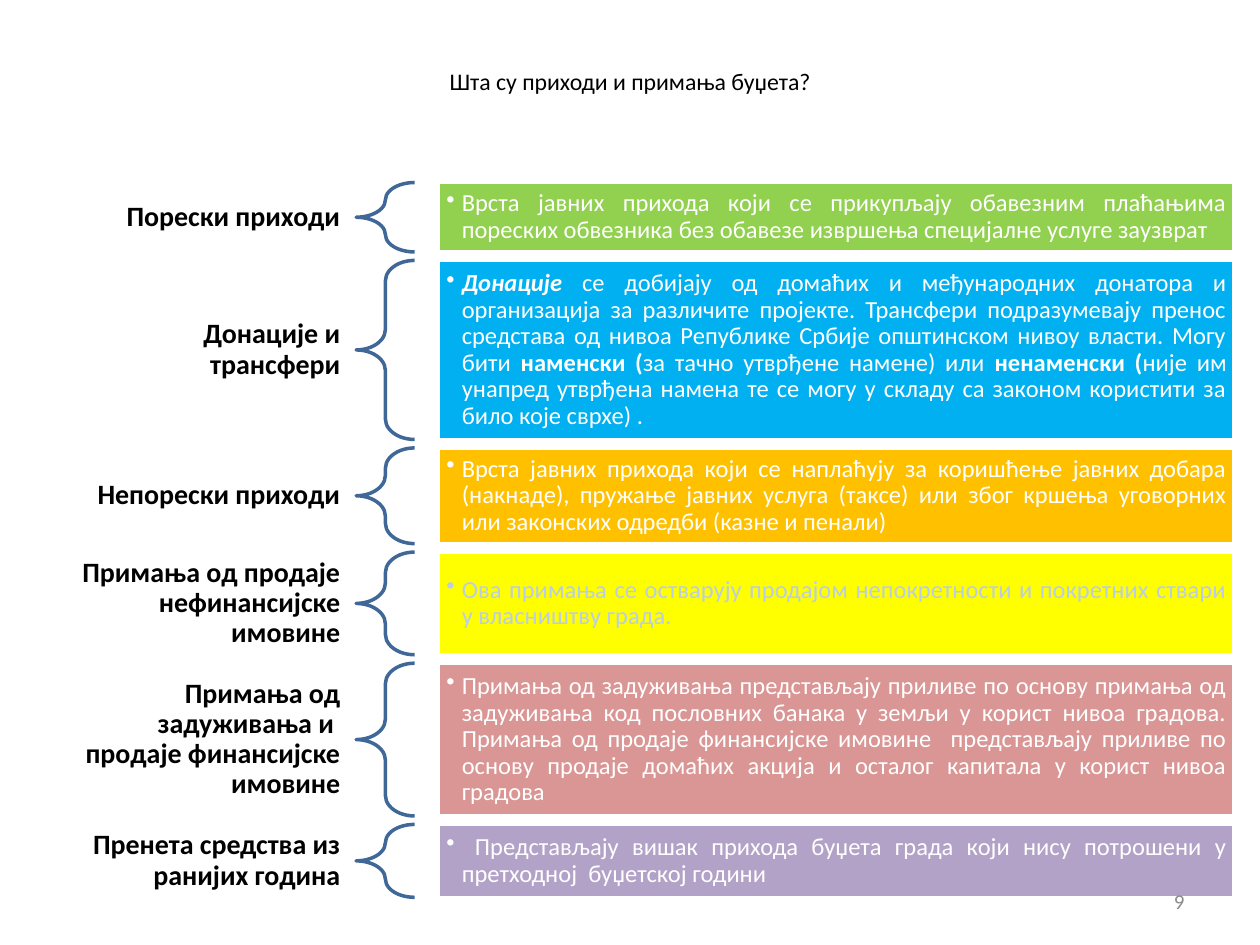
from lxml import etree
from pptx import Presentation
from pptx.dml.color import RGBColor
from pptx.enum import shapes, text
from pptx.oxml.ns import qn
from pptx.util import Cm, Pt

FONT = "Calibri"
ROW_GAP = 0.17
ROWS = [
    (1.4, "Порески приходи", "92D050", "FFFFFF", [
        ("Врста јавних прихода који се прикупљају обавезним плаћањима пореских "
         "обвезника без обавезе извршења специјалне услуге заузврат", "")]),
    (3.61, "Донације и трансфери", "00B0F0", "FFFFFF", [
        ("Донације ", "bi"),
        ("се добијају од домаћих и међународних донатора и организација за "
         "различите пројекте. Трансфери подразумевају пренос средстава од нивоа "
         "Републике Србије општинском нивоу власти. Могу бити ", ""),
        ("наменски (", "b"),
        ("за тачно утврђене намене) или ", ""),
        ("ненаменски (", "b"),
        ("није им унапред утврђена намена те се могу у складу са законом "
         "користити за било које сврхе) .", "")]),
    (1.93, "Непорески приходи", "FFC000", "FFFFFF", [
        ("Врста јавних прихода који се наплаћују за коришћење јавних добара "
         "(накнаде), пружање јавних услуга (таксе) или због кршења уговорних "
         "или законских одредби (казне и пенали)", "")]),
    (2.07, "Примања од продаје нефинансијске имовине", "FFFF00", "B9CDE5", [
        ("Ова примања се остварују продајом непокретности и покретних ствари у "
         "власништву града.", "")]),
    (3.08, "Примања од задуживања и  продаје финансијске имовине", "D99694", "FFFFFF", [
        ("Примања од задуживања представљају приливе по основу примања од "
         "задуживања код пословних банака у земљи у корист нивоа градова. "
         "Примања од продаје финансијске имовине  представљају приливе по основу "
         "продаје домаћих акција и осталог капитала у корист нивоа градова", "")]),
    (1.47, "Пренета средства из ранијих година", "B3A2C7", "FFFFFF", [
        (" Представљају вишак прихода буџета града који нису потрошени у "
         "претходној  буџетској години", "")]),
]


def color(value):
    """Turn a hex string into a colour."""
    return RGBColor.from_string(value)


def set_frame(box, side, edge, anchor=text.MSO_ANCHOR.MIDDLE):
    """Wrap the text of a box, set its insets and return its first paragraph."""
    frame = box.text_frame
    frame.word_wrap = True
    frame.auto_size = text.MSO_AUTO_SIZE.NONE
    frame.vertical_anchor = anchor
    frame.margin_left = frame.margin_right = Cm(side)
    frame.margin_top = frame.margin_bottom = Cm(edge)
    return frame.paragraphs[0]


def style(para, size, hue, align, bold=False):
    """Set the font and alignment of a paragraph."""
    para.alignment = align
    para.font.name = FONT
    para.font.size = Pt(size)
    para.font.bold = bold
    para.font.color.rgb = color(hue)


def add_bullet(para):
    """Give a paragraph a hanging round bullet."""
    props = para._p.get_or_add_pPr()
    props.set("marL", str(Cm(0.33)))
    props.set("indent", str(-Cm(0.31)))
    bullet = etree.Element(qn("a:buChar"), char="•")
    props.insert_element_before(bullet, "a:tabLst", "a:defRPr", "a:extLst")


def add_title(slide, left, top, width, height):
    """Place and format the title."""
    title = slide.shapes.title
    title.left, title.top, title.width, title.height = map(Cm, (left, top, width, height))
    title.text_frame.text = "Шта су приходи и примања буџета?"
    style(set_frame(title, 0.25, 0.13), 13.6, "000000", text.PP_ALIGN.CENTER)


def add_label(slide, label, left, top, width, height):
    """Add the bold name of a revenue type."""
    box = slide.shapes.add_textbox(Cm(left), Cm(top), Cm(width), Cm(height))
    para = set_frame(box, 0.31, 0.1)
    para.text = label
    para.line_spacing = 0.9
    style(para, 16, "000000", text.PP_ALIGN.RIGHT, True)


def add_brace(slide, left, top, width, height):
    """Add the brace between a name and its description."""
    brace = slide.shapes.add_shape(
        shapes.MSO_SHAPE.LEFT_BRACE, Cm(left), Cm(top), Cm(width), Cm(height))
    brace.shadow.inherit = False
    brace.adjustments[0] = 0.35
    brace.fill.background()
    brace.line.color.rgb = color("3F6797")
    brace.line.width = Pt(2)


def add_description(slide, spans, fill, hue, left, top, width, height):
    """Add the coloured panel that explains a revenue type."""
    panel = slide.shapes.add_shape(
        shapes.MSO_SHAPE.RECTANGLE, Cm(left), Cm(top), Cm(width), Cm(height))
    panel.shadow.inherit = False
    panel.fill.solid()
    panel.fill.fore_color.rgb = color(fill)
    panel.line.color.rgb = color("FFFFFF")
    panel.line.width = Pt(2)
    para = set_frame(panel, 0.15, 0.15)
    para.line_spacing = 0.9
    style(para, 14, hue, text.PP_ALIGN.JUSTIFY)
    add_bullet(para)
    for words, marks in spans:
        span = para.add_run()
        span.text = words
        span.font.name = FONT
        span.font.size = Pt(14)
        span.font.color.rgb = color(hue)
        span.font.bold = "b" in marks
        span.font.italic = "i" in marks


def add_rows(slide, left, top):
    """Stack the revenue types with equal gaps."""
    for height, label, fill, hue, spans in ROWS:
        add_label(slide, label, left, top, 5.9, height)
        add_brace(slide, left + 5.91, top, 1.18, height)
        add_description(slide, spans, fill, hue, left + 7.56, top, 16.05, height)
        top += height + ROW_GAP


def add_page_number(slide, left, top, width, height):
    """Add the page number."""
    box = slide.shapes.add_textbox(Cm(left), Cm(top), Cm(width), Cm(height))
    para = set_frame(box, 0.25, 0.13)
    para.text = "9"
    style(para, 12, "8B8B8B", text.PP_ALIGN.RIGHT)


def main():
    """Build and save the deck."""
    deck = Presentation()
    deck.slide_width, deck.slide_height = Cm(25.4), Cm(19.05)
    page = deck.slides.add_slide(deck.slide_layouts[5])
    add_title(page, 1.27, 0.76, 22.86, 1.73)
    add_rows(page, 1.27, 3.68)
    add_page_number(page, 18.2, 17.66, 5.93, 1.01)
    deck.save("out.pptx")


if __name__ == "__main__":
    main()
